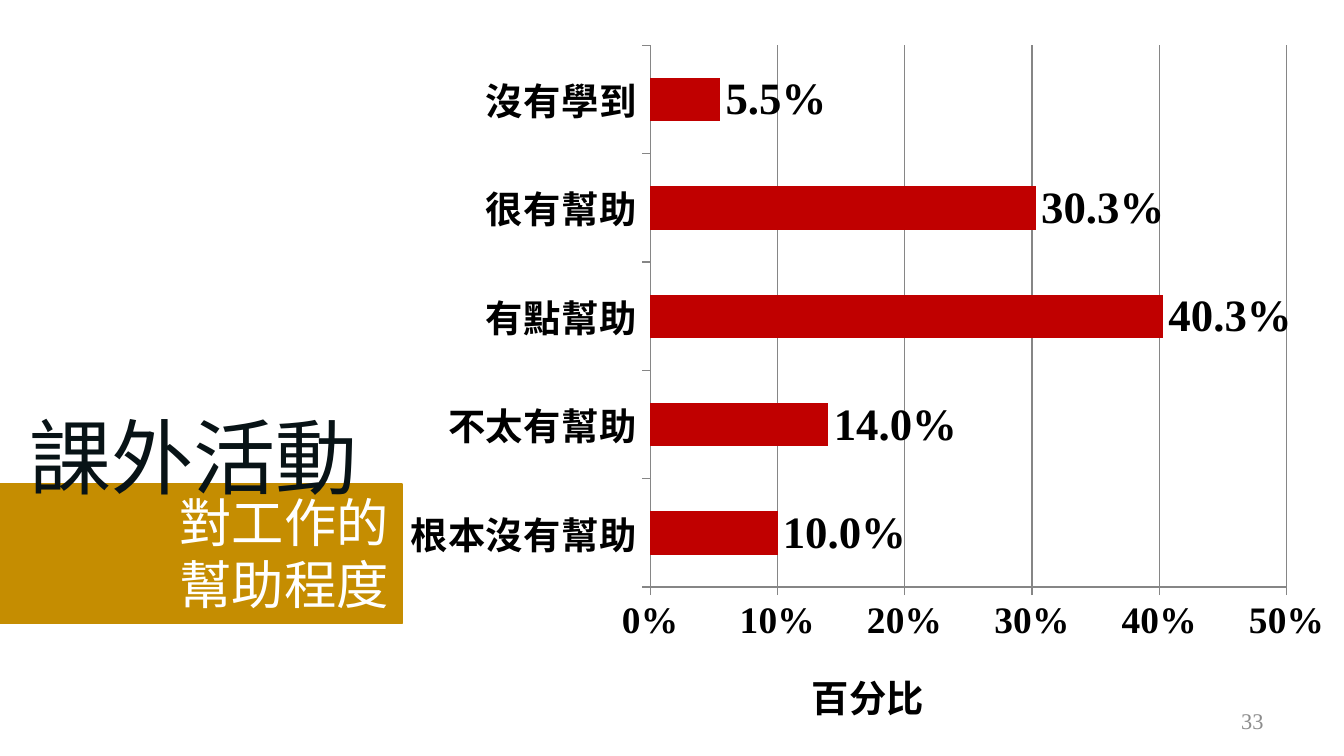
from lxml import etree
from pptx import Presentation
from pptx.chart.data import CategoryChartData as Data
from pptx.dml.color import RGBColor as RGB
from pptx.enum.chart import XL_CHART_TYPE as Kind, XL_LABEL_POSITION as Spot
from pptx.enum.chart import XL_TICK_MARK as Tick
from pptx.enum.text import MSO_ANCHOR as Anchor, PP_ALIGN as Align
from pptx.oxml.ns import qn
from pptx.util import Inches, Pt

SANS, SERIF = "Noto Sans CJK JP", "Times New Roman"
GREY = "868686"
WIDTH = 10
HEIGHT = WIDTH * 9 / 16
HELP = {"根本沒有幫助": 0.1, "不太有幫助": 0.14, "有點幫助": 0.403,
        "很有幫助": 0.303, "沒有學到": 0.055}


def tint(color, code):
    color.rgb = RGB.from_string(code)


def style(font, code, **values):
    for key, val in values.items():
        setattr(font, key, val)
    tint(font.color, code)


def place(shape, box):
    for key, val in zip(("left", "top", "width", "height"), box):
        setattr(shape, key, Inches(val))


def write(shape, text, size, name, code, align, **frame):
    """Fill a shape with one formatted paragraph."""
    body = shape.text_frame
    body.text = text
    body.word_wrap = True
    for key, val in frame.items():
        setattr(body, key, val)
    para = body.paragraphs[0]
    para.alignment = align
    para.space_before = Pt(0)
    for run in para.runs:
        style(run.font, code, size=Pt(size), name=name, bold=False)
        east = etree.SubElement(run.font._element, qn("a:ea"))
        east.set("typeface", name)
    return para


def arrange(parent, index, **values):
    """Give a chart part a manual layout, as shares of the chart."""
    for old in parent.findall(qn("c:layout")):
        parent.remove(old)
    layout = etree.Element(qn("c:layout"))
    manual = etree.SubElement(layout, qn("c:manualLayout"))
    for key, val in values.items():
        etree.SubElement(manual, qn("c:" + key)).set("val", str(val))
    parent.insert(index, layout)


def heading(slide, box):
    x, y, w, h = box
    title, body = slide.shapes.title, slide.placeholders[1]

    # Gold panel with the subtitle
    place(body, (x, y + 0.63, w - 0.04, h - 0.63))
    body.fill.solid()
    tint(body.fill.fore_color, "C58D01")
    tint(body.line.color, "C58D01")
    body.line.width = Pt(0.75)
    para = write(body, "對工作的\v幫助程度", 28, SANS, "FFFFFF", Align.RIGHT,
                 vertical_anchor=Anchor.TOP, margin_top=Inches(0.06),
                 margin_bottom=0)
    para.line_spacing = Pt(33)
    props = para._p.get_or_add_pPr()
    props.set("marL", "0")
    props.set("indent", "0")
    etree.SubElement(props, qn("a:buNone"))

    # Title, in front of the panel
    place(title, (x + 0.12, y, w - 0.12, 0.84))
    write(title, "課外活動", 44, SANS, "081316", Align.LEFT,
          vertical_anchor=Anchor.MIDDLE)
    body._element.addnext(title._element)


def graph(slide, box):
    data = Data()
    data.categories = list(HELP)
    data.add_series("Series 1", list(HELP.values()))
    chart = slide.shapes.add_chart(
        Kind.BAR_CLUSTERED, *map(Inches, box), data).chart
    chart.has_legend = chart.has_title = False
    style(chart.font, "000000", size=Pt(20), name=SERIF, bold=True)

    # Bars and their labels
    plot = chart.plots[0]
    plot.gap_width, plot.vary_by_categories = 150, False
    bars = plot.series[0]
    bars.format.fill.solid()
    tint(bars.format.fill.fore_color, "C00000")
    tags = bars.data_labels
    for key, val in {"show_value": True, "number_format": "0.0%",
                     "number_format_is_linked": False,
                     "position": Spot.OUTSIDE_END}.items():
        setattr(tags, key, val)
    style(tags.font, "000000", size=Pt(24), name=SERIF, bold=True)

    # Axes and grid
    cat, val = chart.category_axis, chart.value_axis
    val.minimum_scale, val.maximum_scale, val.major_unit = 0, 0.5, 0.1
    val.has_major_gridlines = True
    val.tick_labels.number_format = "0%"
    val.tick_labels.number_format_is_linked = False
    cat.major_tick_mark = val.major_tick_mark = Tick.OUTSIDE
    for part in (cat, val, val.major_gridlines):
        tint(part.format.line.color, GREY)
        part.format.line.width = Pt(0.75)

    # Axis title
    name = val.axis_title
    name.text_frame.text = "百分比"
    style(name.text_frame.paragraphs[0].runs[0].font, "000000",
          size=Pt(20), name=SERIF, bold=True)
    arrange(name._element, 1, xMode="edge", yMode="edge", x=0.434, y=0.865)
    area = chart._chartSpace.find(".//" + qn("c:plotArea"))
    arrange(area, 0, layoutTarget="inner", xMode="edge", yMode="edge",
            x=0.272, y=0.02, w=0.668, h=0.748)


def number(slide, box):
    note = slide.shapes.add_textbox(*map(Inches, box))
    write(note, "33", 12, SERIF, "8C8C8C", Align.RIGHT,
          vertical_anchor=Anchor.MIDDLE)


def main():
    deck = Presentation()
    deck.slide_width, deck.slide_height = Inches(WIDTH), Inches(HEIGHT)
    slide = deck.slides.add_slide(deck.slide_layouts[1])
    graph(slide, (2.91, 0.23, 7.09, 5.39))
    number(slide, (7.17, 5.21, 2.33, 0.3))
    heading(slide, (0, 2.97, 3.03, 1.67))
    deck.save("out.pptx")


if __name__ == "__main__":
    main()
